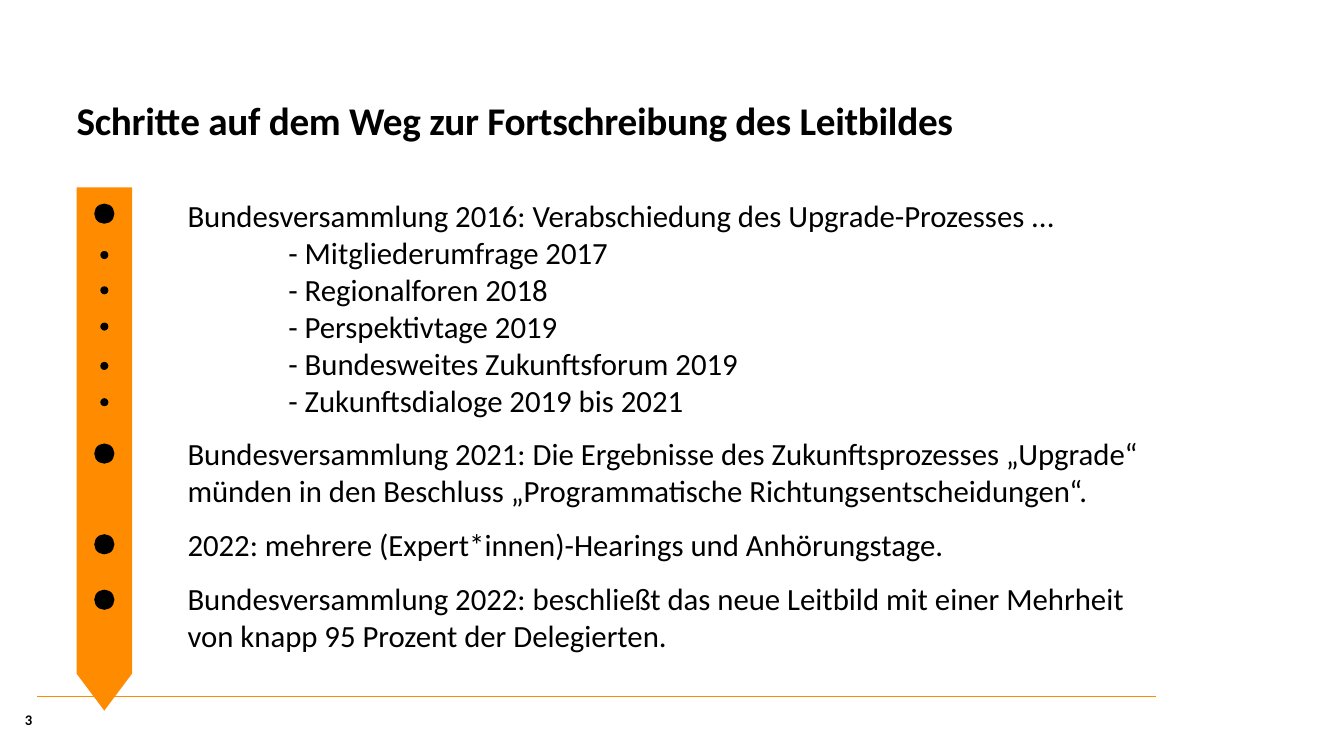
from pptx import Presentation
from pptx.dml.color import RGBColor
from pptx.enum import shapes, text
from pptx.oxml.ns import qn
from pptx.util import Inches, Pt
from lxml import etree

COLORS = {"orange": "FF8C00", "black": "000000"}
FONT = "Calibri"

TITLE = "Schritte auf dem Weg zur Fortschreibung des Leitbildes"
PAGE_NUMBER = "3"
# (step, sub-steps)
STEPS = [
    ("Bundesversammlung 2016: Verabschiedung des Upgrade-Prozesses ...",
     ["- Mitgliederumfrage 2017",
      "- Regionalforen 2018",
      "- Perspektivtage 2019",
      "- Bundesweites Zukunftsforum 2019",
      "- Zukunftsdialoge 2019 bis 2021"]),
    ("Bundesversammlung 2021: Die Ergebnisse des Zukunftsprozesses „Upgrade“ "
     "münden in den Beschluss „Programmatische Richtungsentscheidungen“.", []),
    ("2022: mehrere (Expert*innen)-Hearings und Anhörungstage.", []),
    ("Bundesversammlung 2022: beschließt das neue Leitbild mit einer Mehrheit "
     "von knapp 95 Prozent der Delegierten.", []),
]

ARROW_LEFT, ARROW_WIDTH = 0.76, 0.55
# (diameter, top edges)
DOTS = [
    (0.2, [2.02, 4.4, 5.3, 5.85]),
    (0.08, [2.49, 2.84, 3.2, 3.59, 3.95]),
]


def color(name):
    return RGBColor.from_string(COLORS[name])


def place(shape, left, top, width, height):
    shape.left, shape.top = Inches(left), Inches(top)
    shape.width, shape.height = Inches(width), Inches(height)


def prepare_frame(shape, anchor=text.MSO_ANCHOR.TOP):
    """Remove the insets and autofit of a text shape and return its frame."""
    frame = shape.text_frame
    frame.margin_left = frame.margin_right = 0
    frame.margin_top = frame.margin_bottom = 0
    frame.word_wrap = True
    frame.auto_size = text.MSO_AUTO_SIZE.NONE
    frame.vertical_anchor = anchor
    return frame


def style(paragraph, size, bold=False, align=text.PP_ALIGN.LEFT):
    paragraph.alignment = align
    paragraph.font.name = FONT
    paragraph.font.size = Pt(size)
    paragraph.font.bold = bold
    paragraph.font.color.rgb = color("black")


def add_filled(slide, kind, left, top, width, height, fill):
    shape = slide.shapes.add_shape(
        kind, Inches(left), Inches(top), Inches(width), Inches(height))
    shape.shadow.inherit = False
    shape.fill.solid()
    shape.fill.fore_color.rgb = color(fill)
    shape.line.fill.background()
    return shape


def add_title(slide):
    title = slide.shapes.title
    place(title, 0.76, 0.99, 10.71, 0.45)
    paragraph = prepare_frame(title).paragraphs[0]
    run = paragraph.add_run()
    run.text = TITLE
    run.font._element.set("spc", "-20")
    paragraph.line_spacing = 0.95
    style(paragraph, 28, bold=True)


def add_steps(slide):
    body = slide.placeholders[1]
    place(body, 1.86, 1.95, 9.61, 4.58)
    frame = prepare_frame(body)
    lines = []
    for step, substeps in STEPS:
        lines.append((step, 0, 12 if lines else 0))
        lines += [(substep, 1, 0) for substep in substeps]
    for index, (line, indent, gap) in enumerate(lines):
        paragraph = frame.add_paragraph() if index else frame.paragraphs[0]
        paragraph.text = line
        paragraph.space_before = Pt(gap)
        properties = paragraph._p.get_or_add_pPr()
        properties.set("marL", str(Inches(indent)))
        properties.set("indent", "0")
        etree.SubElement(properties, qn("a:buNone"))
        style(paragraph, 22)


def add_timeline(slide):
    arrow = add_filled(slide, shapes.MSO_SHAPE.DOWN_ARROW,
                       ARROW_LEFT, 1.86, ARROW_WIDTH, 5.19, "orange")
    arrow.adjustments[0], arrow.adjustments[1] = 1, 0.667
    center = ARROW_LEFT + ARROW_WIDTH / 2
    for diameter, tops in DOTS:
        for top in tops:
            add_filled(slide, shapes.MSO_SHAPE.OVAL, center - diameter / 2,
                       top, diameter, diameter, "black")


def add_footer(slide):
    rule = slide.shapes.add_connector(
        shapes.MSO_CONNECTOR.STRAIGHT,
        Inches(0.37), Inches(6.91), Inches(11.47), Inches(6.91))
    rule.line.color.rgb = color("orange")
    rule.line.width = Pt(1)
    etree.SubElement(rule._element.spPr, qn("a:effectLst"))

    number = slide.shapes.add_textbox(
        Inches(0), Inches(7.05), Inches(0.32), Inches(0.18))
    paragraph = prepare_frame(number, text.MSO_ANCHOR.MIDDLE).paragraphs[0]
    paragraph.text = PAGE_NUMBER
    style(paragraph, 10.5, bold=True, align=text.PP_ALIGN.RIGHT)


def main():
    presentation = Presentation()
    presentation.slide_width = Inches(13.33)
    presentation.slide_height = Inches(7.5)
    slide = presentation.slides.add_slide(presentation.slide_layouts[1])
    add_footer(slide)
    add_timeline(slide)
    add_title(slide)
    add_steps(slide)
    presentation.save("out.pptx")


if __name__ == "__main__":
    main()
